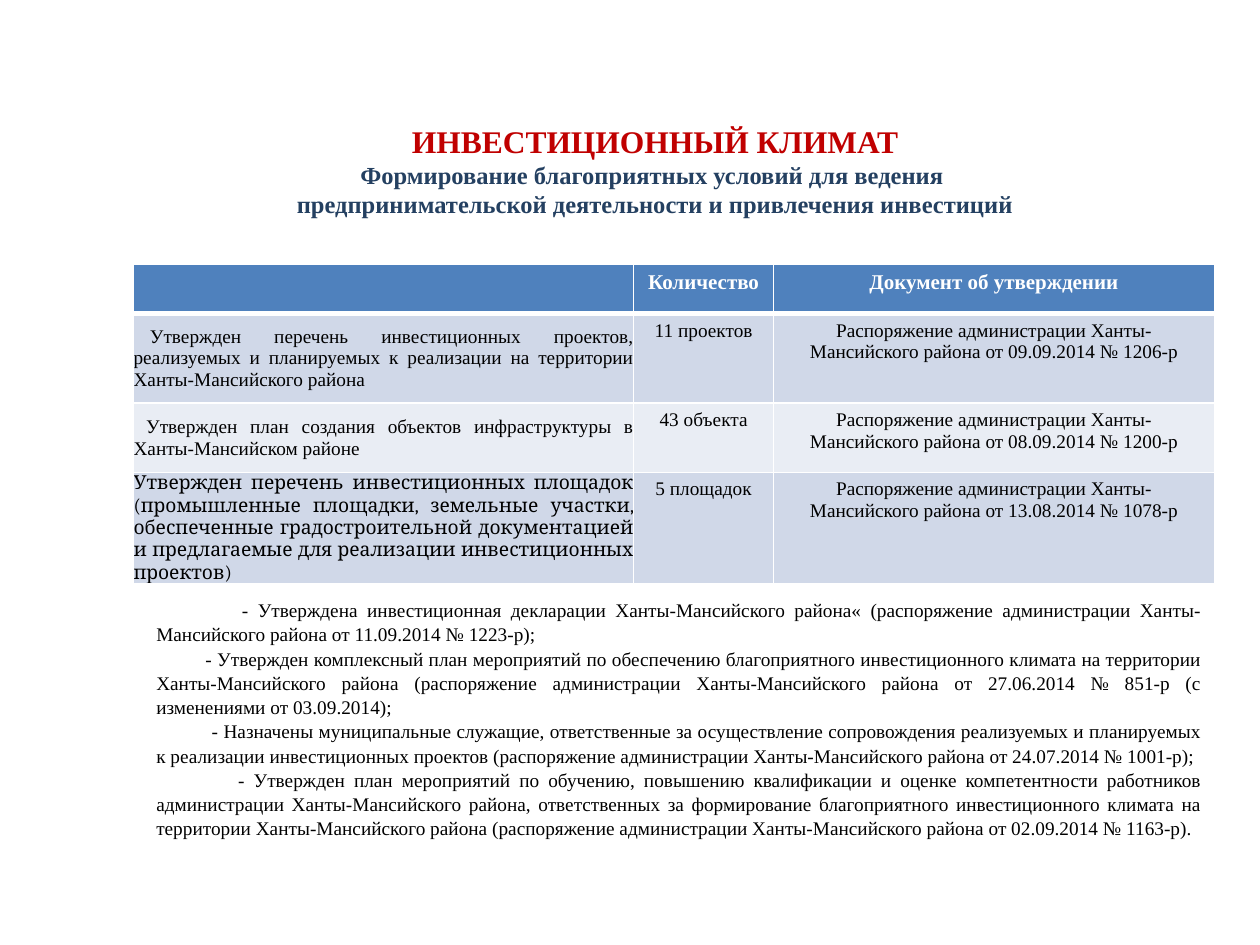
"""Build the investment climate slide with its table of approved lists."""
from lxml.etree import SubElement
from pptx import Presentation
from pptx.dml.color import RGBColor
from pptx.enum.text import MSO_ANCHOR as ANCHOR, MSO_AUTO_SIZE as AUTO, PP_ALIGN as ALIGN
from pptx.oxml.ns import qn
from pptx.util import Inches, Pt


def rgb(value):
    return RGBColor.from_string(value)


def write(p, text, size=11, color="000000", bold=False, font="Times New Roman",
          align=ALIGN.CENTER, indent=0, spacing=1.0):
    pPr = p._p.get_or_add_pPr()
    pPr.set("marL", "0")
    pPr.set("indent", str(Inches(indent)))
    SubElement(pPr, qn("a:buNone"))
    p.alignment, p.line_spacing = align, spacing
    p.space_before = p.space_after = Pt(0)
    r = p.add_run()
    r.text = text
    r.font.size, r.font.bold, r.font.name = Pt(size), bold, font
    r.font.color.rgb = rgb(color)


prs = Presentation()
prs.slide_width, prs.slide_height = Inches(10), Inches(7.5)
s = prs.slides.add_slide(prs.slide_layouts[1])
title, body = s.placeholders

title_lines = [
    ("ИНВЕСТИЦИОННЫЙ КЛИМАТ", 18, "C00000"),
    ("Формирование благоприятных условий для ведения ", 14, "244061"),
    ("предпринимательской деятельности и привлечения инвестиций", 14, "244061"),
]
measures = [
    ("- Утверждена инвестиционная декларации Ханты-Мансийского района« (распоряжение "
     "администрации Ханты-Мансийского района от 11.09.2014 № 1223-р);", 0.68),
    ("- Утвержден комплексный план мероприятий по обеспечению благоприятного инвестиционного "
     "климата на территории Ханты-Мансийского района (распоряжение администрации "
     "Ханты-Мансийского района от 27.06.2014 № 851-р (с изменениями от 03.09.2014);", 0.39),
    ("- Назначены муниципальные служащие, ответственные за осуществление сопровождения "
     "реализуемых и планируемых к реализации инвестиционных проектов (распоряжение "
     "администрации Ханты-Мансийского района от 24.07.2014 № 1001-р);", 0.44),
    ("- Утвержден план мероприятий по обучению, повышению квалификации и оценке "
     "компетентности работников администрации Ханты-Мансийского района, ответственных за "
     "формирование благоприятного инвестиционного климата на территории Ханты-Мансийского "
     "района (распоряжение администрации Ханты-Мансийского района от 02.09.2014 № 1163-р).", 0.65),
]

for sp, box in ((title, (0.75, 0.92, 8.9, 1.18)), (body, (1.14, 4.69, 8.5, 1.95))):
    sp.left, sp.top, sp.width, sp.height = map(Inches, box)
    tf = sp.text_frame
    tf.word_wrap, tf.auto_size = True, AUTO.NONE
    tf.vertical_anchor = ANCHOR.TOP

tf = title.text_frame
for i, (text, size, color) in enumerate(title_lines):
    p = tf.add_paragraph() if i else tf.paragraphs[0]
    write(p, text, size=size, color=color, bold=True)

tf = body.text_frame
for i, (text, indent) in enumerate(measures):
    p = tf.add_paragraph() if i else tf.paragraphs[0]
    write(p, text, align=ALIGN.JUSTIFY, indent=indent, spacing=1.05)

order = "Распоряжение администрации Ханты-Мансийского района от {}-р"
rows = [
    ("", "Количество", "Документ об утверждении"),
    ("Утвержден перечень инвестиционных проектов, реализуемых и планируемых к реализации на "
     "территории Ханты-Мансийского района", "11 проектов", order.format("09.09.2014 № 1206")),
    ("Утвержден план создания объектов инфраструктуры в Ханты-Мансийском районе",
     "43 объекта", order.format("08.09.2014 № 1200")),
    ("Утвержден перечень инвестиционных площадок (промышленные площадки, земельные участки, "
     "обеспеченные градостроительной документацией и предлагаемые для реализации "
     "инвестиционных проектов)", "5 площадок", order.format("13.08.2014 № 1078")),
]
fills = ["4F81BD", "D0D8E8", "E9EDF4", "D0D8E8"]
heights = [0.39, 0.71, 0.55, 0.87]
indents = [0, 0.13, 0.1, 0]

table = s.shapes.add_table(4, 3, Inches(1.06), Inches(2.1), Inches(8.58), Inches(2.52)).table
for col, width in zip(table.columns, (3.97, 1.11, 3.5)):
    col.width = Inches(width)
for i, texts in enumerate(rows):
    table.rows[i].height = Inches(heights[i])
    for j, text in enumerate(texts):
        cell = table.cell(i, j)
        p = cell.text_frame.paragraphs[0]
        if i == 0:
            write(p, text, size=12, color="FFFFFF", bold=True)
        elif j == 0:
            cell.margin_left = cell.margin_right = cell.margin_top = cell.margin_bottom = 0
            cell.vertical_anchor = ANCHOR.MIDDLE
            write(p, text, font="Cambria" if i == 3 else "Times New Roman",
                  align=ALIGN.JUSTIFY, indent=indents[i])
        else:
            write(p, text)
        tcPr = cell._tc.get_or_add_tcPr()
        for side in "LRTB":
            thick = (i, side) in ((0, "B"), (1, "T"))
            ln = SubElement(tcPr, qn(f"a:ln{side}"), w=str(Pt(3 if thick else 1)))
            SubElement(SubElement(ln, qn("a:solidFill")), qn("a:srgbClr"), val="FFFFFF")
        cell.fill.solid()
        cell.fill.fore_color.rgb = rgb(fills[i])

prs.save("out.pptx")
